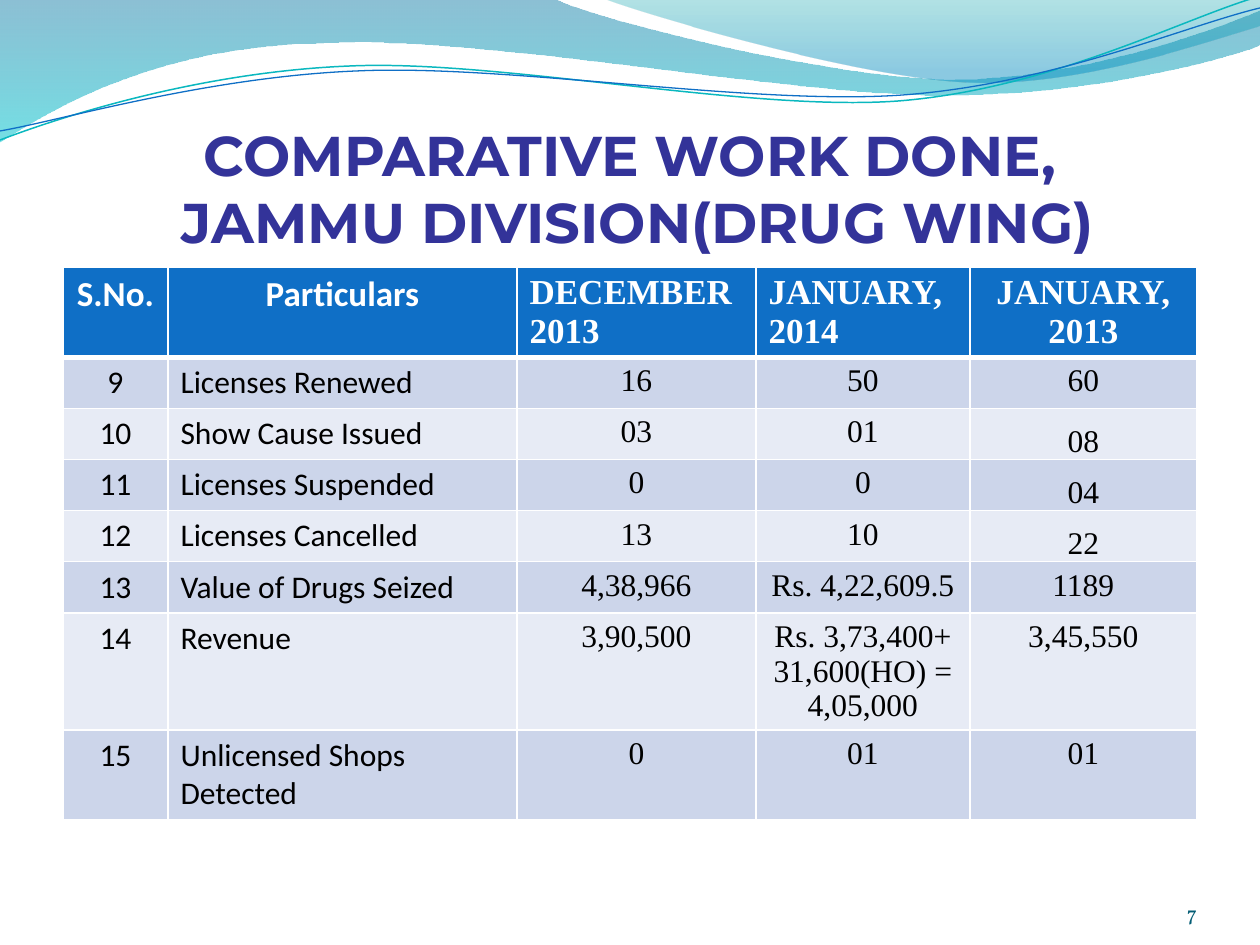
from pptx import Presentation
from pptx.dml.color import RGBColor
from pptx.enum.text import MSO_ANCHOR, MSO_AUTO_SIZE, PP_ALIGN
from pptx.oxml.ns import qn
from pptx.util import Pt
from lxml.etree import SubElement

EMU_PER_PX = 7257.14  # 126 px to the inch
COLORS = {
    "title": "333399", "header": "0F6FC6", "band": "CCD5EA", "plain": "E7EBF5",
    "white": "FFFFFF", "black": "000000", "page": "045D75",
    "deep": "0074A1", "aqua": "00C6CF", "teal": "00A1A9", "sky": "008BBF",
    "teal_line": "0AB8BF", "blue_line": "0F6FC6",
}
LEFT, CENTER, RIGHT = PP_ALIGN.LEFT, PP_ALIGN.CENTER, PP_ALIGN.RIGHT

# An outline is a start point followed by steps: one point for a straight
# line, three points for a Bezier curve.
LARGE_WAVE = [
    (0, 0), [(554, -1)],
    [(600, 21), (837, 79), (955, 79)], [(1075, 79), (1207, 33), (1260, 11)],
    [(1261, 45)],
    [(1239, 55), (1096, 96), (940, 95)], [(784, 95), (481, 35), (324, 43)],
    [(163, 45), (58, 105), (-1, 142)], [(0, 0)],
]
SMALL_WAVE = [
    (604, -1),
    [(641, 14), (859, 78), (969, 82)], [(1079, 87), (1211, 40), (1260, 26)],
    [(1260, 0)], [(604, -1)],
]
TEAL_STRAND = [
    (0, 140), [(60, 117), (199, 72), (349, 66)],
    [(498, 59), (747, 112), (898, 101)], [(1050, 89), (1182, 19), (1257, -3)],
]
BLUE_STRAND = [
    (0, 131), [(59, 121), (207, 77), (357, 71)],
    [(508, 64), (752, 106), (903, 95)], [(1053, 84), (1185, 26), (1260, 8)],
]

COLUMN_WIDTHS = [105, 349, 239, 214, 227]
HEADINGS = ["S.No.", "Particulars", "DECEMBER 2013", "JANUARY, 2014", "JANUARY, 2013"]
HEADING_ALIGNS = [CENTER, CENTER, LEFT, LEFT, CENTER]
BODY_ALIGNS = [CENTER, LEFT, CENTER, CENTER, CENTER]
COLUMN_FONTS = ["Calibri"] * 2 + ["Times New Roman"] * 3
WORK_DONE = [
    ["9", "Licenses Renewed", "16", "50", "60"],
    ["10", "Show Cause Issued", "03", "01", "08"],
    ["11", "Licenses Suspended", "0", "0", "04"],
    ["12", "Licenses Cancelled", "13", "10", "22"],
    ["13", "Value of Drugs Seized", "4,38,966", "Rs. 4,22,609.5", "1189"],
    ["14", "Revenue", "3,90,500", "Rs. 3,73,400+ 31,600(HO) = 4,05,000", "3,45,550"],
    ["15", "Unlicensed Shops Detected", "0", "01", "01"],
]
LOW_SET_ROWS = (2, 3, 4)


def px(length):
    return round(length * EMU_PER_PX)


def rgb(name):
    return RGBColor.from_string(COLORS[name])


def bend(shape, steps):
    """Join the three straight segments of each curved step into one Bezier."""
    segments = iter(list(shape.element.iter(qn("a:lnTo"))))
    for step in steps:
        first, *others = [next(segments) for _ in step]
        if others:
            first.tag = qn("a:cubicBezTo")
        for segment in others:
            first.append(segment[0])
            segment.getparent().remove(segment)


class SlideBuilder:
    def __init__(self, slide):
        self.slide = slide

    def style_text(self, frame, text, font, size, color, align, bold=False):
        frame.text = text
        paragraph = frame.paragraphs[0]
        paragraph.alignment = align
        for run in paragraph.runs:
            run.font.name, run.font.size, run.font.bold = font, Pt(size), bold
            run.font.color.rgb = rgb(color)

    def set_insets(self, frame, top=0):
        frame.margin_left = frame.margin_right = frame.margin_bottom = 0
        frame.margin_top = px(top)
        frame.vertical_anchor = MSO_ANCHOR.BOTTOM
        frame.word_wrap = True
        frame.auto_size = MSO_AUTO_SIZE.NONE

    def outline(self, outline, close):
        start, *steps = outline
        builder = self.slide.shapes.build_freeform(*start, scale=EMU_PER_PX)
        builder.add_line_segments([point for step in steps for point in step], close=close)
        shape = builder.convert_to_shape()
        bend(shape, steps)
        shape.shadow.inherit = False
        return shape

    def wave(self, outline, stops):
        """Fill a closed outline downwards; stops are (position, color, opacity %)."""
        shape = self.outline(outline, close=True)
        shape.line.fill.background()
        shape.fill.gradient()
        shape.fill.gradient_angle = 270
        for stop, (position, color, _) in zip(shape.fill.gradient_stops, stops):
            stop.position = position
            stop.color.rgb = rgb(color)
        for tint, (_, _, opacity) in zip(shape.element.iter(qn("a:srgbClr")), stops):
            SubElement(tint, qn("a:alpha"), val=str(opacity * 1000))

    def strand(self, outline, color, width):
        shape = self.outline(outline, close=False)
        shape.fill.background()
        shape.line.color.rgb = rgb(color)
        shape.line.width = Pt(width)

    def title(self, text, left, top, width, height):
        title = self.slide.shapes.title
        title.left, title.top, title.width, title.height = map(px, (left, top, width, height))
        self.set_insets(title.text_frame, top=6)
        self.style_text(title.text_frame, text, "Montserrat", 32, "title", CENTER, bold=True)

    def page_number(self, text, left, top, width, height):
        box = self.slide.shapes.add_textbox(*map(px, (left, top, width, height)))
        self.set_insets(box.text_frame)
        self.style_text(box.text_frame, text, "Vollkorn", 12, "page", RIGHT)

    def cell_borders(self, cell, bottom):
        properties = cell._tc.get_or_add_tcPr()
        for side, width in (("lnL", 1), ("lnR", 1), ("lnT", 1), ("lnB", bottom)):
            border = SubElement(properties, qn(f"a:{side}"), w=str(Pt(width)))
            fill = SubElement(border, qn("a:solidFill"))
            SubElement(fill, qn("a:srgbClr"), val=COLORS["white"])

    def table(self, rows, left, top, height, row_height):
        frame = self.slide.shapes.add_table(
            len(rows), len(COLUMN_WIDTHS), px(left), px(top), px(sum(COLUMN_WIDTHS)), px(height))
        table = frame.table
        for column, width in zip(table.columns, COLUMN_WIDTHS):
            column.width = px(width)
        for r, texts in enumerate(rows):
            table.rows[r].height = px(row_height)
            heading = r == 0
            fill = "header" if heading else "band" if r % 2 else "plain"
            aligns = HEADING_ALIGNS if heading else BODY_ALIGNS
            size, color = (20, "white") if heading else (18, "black")
            for c, text in enumerate(texts):
                cell = table.cell(r, c)
                self.cell_borders(cell, bottom=3 if heading else 1)
                cell.fill.solid()
                cell.fill.fore_color.rgb = rgb(fill)
                self.style_text(cell.text_frame, text, COLUMN_FONTS[c], size, color,
                                aligns[c], bold=heading)
                if r in LOW_SET_ROWS and c == len(texts) - 1:
                    cell.vertical_anchor = MSO_ANCHOR.BOTTOM
                    cell.margin_left = cell.margin_right = px(9)
                    cell.margin_top = cell.margin_bottom = 0
        frame.height = px(height)


def main():
    deck = Presentation()
    deck.slide_width, deck.slide_height = px(1260), px(945)
    page = SlideBuilder(deck.slides.add_slide(deck.slide_layouts[5]))
    page.wave(LARGE_WAVE, [(0, "deep", 45), (1, "aqua", 55)])
    page.wave(SMALL_WAVE, [(0, "teal", 30), (0.8, "sky", 45)])
    page.strand(TEAL_STRAND, "teal_line", 0.85)
    page.strand(BLUE_STRAND, "blue_line", 0.75)
    page.title("COMPARATIVE WORK DONE,\v JAMMU DIVISION(DRUG WING)", 63, 97, 1134, 158)
    page.table([HEADINGS, *WORK_DONE], 63, 267, 566, 51)
    page.page_number("7", 1092, 876, 105, 50)
    deck.save("out.pptx")


if __name__ == "__main__":
    main()
